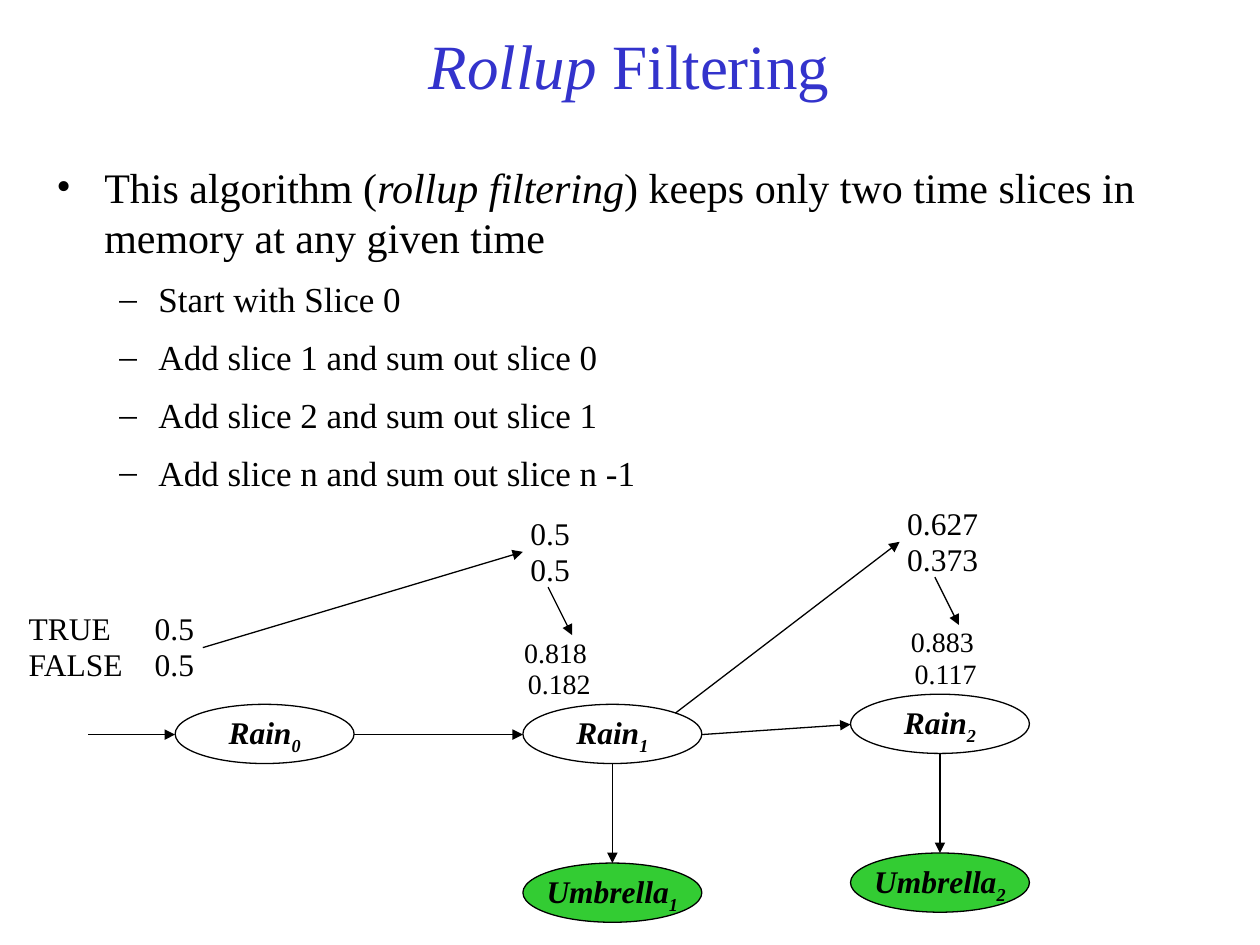
import pptx
import pptx.util
import pptx.dml.color
import pptx.enum.shapes
import pptx.enum.text
from lxml import etree
from pptx.oxml.ns import qn

Inches, Pt = pptx.util.Inches, pptx.util.Pt
ALIGN = pptx.enum.text.PP_ALIGN
ANCHOR = pptx.enum.text.MSO_ANCHOR
BLACK, BLUE, GREEN = "000000", "3333CC", "33CC33"
NODE_W, NODE_H = 1.42, 0.47


def rgb(hex_color):
    return pptx.dml.color.RGBColor.from_string(hex_color)


class Deck:
    font = "Times New Roman"

    def __init__(self, prs):
        self.s = prs.slides.add_slide(prs.slide_layouts[6])

    def run(self, p, text, size, color=BLACK, bold=False, italic=False):
        r = p.add_run()
        r.text = text
        f = r.font
        f.name, f.size, f.bold, f.italic = self.font, Pt(size), bold, italic
        f.color.rgb = rgb(color)
        return r

    def box(self, x, y, w, h, inset=True):
        tf = self.s.shapes.add_textbox(Inches(x), Inches(y), Inches(w), Inches(h)).text_frame
        tf.word_wrap = True
        if not inset:
            tf.margin_left = tf.margin_right = tf.margin_top = tf.margin_bottom = 0
        return tf

    def paragraph(self, tf, first, spacing=None, left=0, hang=0):
        """Start a paragraph; left and hang are its indents in inches."""
        p = tf.paragraphs[0] if first else tf.add_paragraph()
        p.line_spacing = spacing
        pPr = p._p.get_or_add_pPr()
        pPr.set("marL", str(Inches(left)))
        pPr.set("indent", str(Inches(-hang)))
        return p

    def title(self, parts):
        tf = self.box(0.33, 0.17, 9.33, 0.75)
        tf.vertical_anchor = ANCHOR.MIDDLE
        p = self.paragraph(tf, True, 0.9)
        p.alignment = ALIGN.CENTER
        for text, italic in parts:
            self.run(p, text, 36, BLUE, italic=italic)

    def bullets(self, items):
        """Each item is a level and its (text, italic) parts."""
        levels = [(24, 0.38, 0.38, "•"), (20, 0.81, 0.31, "–")]
        tf = self.box(0.35, 1.23, 9.06, 0.95)
        for i, (level, parts) in enumerate(items):
            size, left, hang, mark = levels[level]
            p = self.paragraph(tf, i == 0, left=left, hang=hang)
            p.level = level
            p.space_before = Pt(9)
            etree.SubElement(p._p.pPr, qn("a:buFont")).set("typeface", self.font)
            etree.SubElement(p._p.pPr, qn("a:buChar")).set("char", mark)
            for text, italic in parts:
                self.run(p, text, size, italic=italic)

    def values(self, x, y, w, h, size, lines):
        """Stack of probabilities; each line is a left indent and a text."""
        tf = self.box(x, y, w, h, inset=False)
        for i, (left, text) in enumerate(lines):
            self.run(self.paragraph(tf, i == 0, 0.95, left), text, size)

    def table_of_priors(self, x, y, w, h, rows):
        tf = self.box(x, y, w, h)
        for i, row in enumerate(rows):
            p = self.paragraph(tf, i == 0, 0.95)
            tabs = etree.SubElement(p._p.pPr, qn("a:tabLst"))
            etree.SubElement(tabs, qn("a:tab"), pos=str(Inches(0.95)), algn="l")
            self.run(p, "\t".join(row), 18)

    def node(self, x, y, name, index, fill=None):
        sp = self.s.shapes.add_shape(pptx.enum.shapes.MSO_SHAPE.OVAL, Inches(x),
                                     Inches(y), Inches(NODE_W), Inches(NODE_H))
        sp.shadow.inherit = False
        if fill:
            sp.fill.solid()
            sp.fill.fore_color.rgb = rgb(fill)
        else:
            sp.fill.background()
        sp.line.color.rgb = rgb(BLACK)
        sp.line.width = Pt(0.75)
        tf = sp.text_frame
        tf.word_wrap = False
        tf.vertical_anchor = ANCHOR.MIDDLE
        p = self.paragraph(tf, True, 0.95)
        p.alignment = ALIGN.CENTER
        self.run(p, name, 18, bold=True, italic=True)
        r = self.run(p, index, 18, bold=True, italic=True)
        r.font._element.set("baseline", "-25000")

    def arrow(self, x1, y1, x2, y2):
        c = self.s.shapes.add_connector(pptx.enum.shapes.MSO_CONNECTOR.STRAIGHT,
                                        Inches(x1), Inches(y1), Inches(x2), Inches(y2))
        c.line.color.rgb = rgb(BLACK)
        c.line.width = Pt(0.75)
        etree.SubElement(c.line._get_or_add_ln(), qn("a:tailEnd")).set("type", "triangle")
        etree.SubElement(c._element.spPr, qn("a:effectLst"))

    def time_slice(self, index, x, y, prior_x, update_x, prior, update):
        """Rain and umbrella nodes with the predicted and updated values above."""
        self.node(x, y, "Rain", index)
        self.node(x, y + 1.26, "Umbrella", index, GREEN)
        mid = x + NODE_W / 2
        self.arrow(mid, y + NODE_H, mid, y + 1.26)
        self.values(prior_x, y - 1.49, 0.71, 0.57, 18, [(0.06, v) for v in prior])
        self.values(update_x, y - 0.53, 1.26, 0.54, 16, zip((0.25, 0.28), update))
        self.arrow(update_x + 0.44, y - 0.93, update_x + 0.63, y - 0.55)


def main():
    prs = pptx.Presentation()
    prs.slide_width, prs.slide_height = Inches(10), Inches(7.5)
    d = Deck(prs)
    d.title([("Rollup", True), (" Filtering", False)])
    steps = ["Start with Slice 0", "Add slice 1 and sum out slice 0",
             "Add slice 2 and sum out slice 1", "Add slice n and sum out slice n -1"]
    d.bullets([(0, [("This algorithm (", False), ("rollup filtering", True),
                    (") keeps only two time slices in memory at any given time", False)])]
              + [(1, [(step, False)]) for step in steps])

    d.node(1.39, 5.59, "Rain", "0")
    d.table_of_priors(0.13, 4.81, 1.6, 0.67, [("TRUE", "0.5"), ("FALSE", "0.5")])
    d.time_slice("1", 4.15, 5.59, 4.15, 3.91, ("0.5", "0.5"), ("0.818", "0.182"))
    d.time_slice("2", 6.75, 5.51, 7.14, 6.98, ("0.627", "0.373"), ("0.883", "0.117"))

    for ends in [(0.7, 5.83, 1.39, 5.83), (2.81, 5.83, 4.15, 5.83),
                 (5.57, 5.83, 6.75, 5.75), (1.61, 5.14, 4.15, 4.38),
                 (5.36, 5.66, 7.14, 4.3)]:
        d.arrow(*ends)
    prs.save("out.pptx")


if __name__ == "__main__":
    main()
